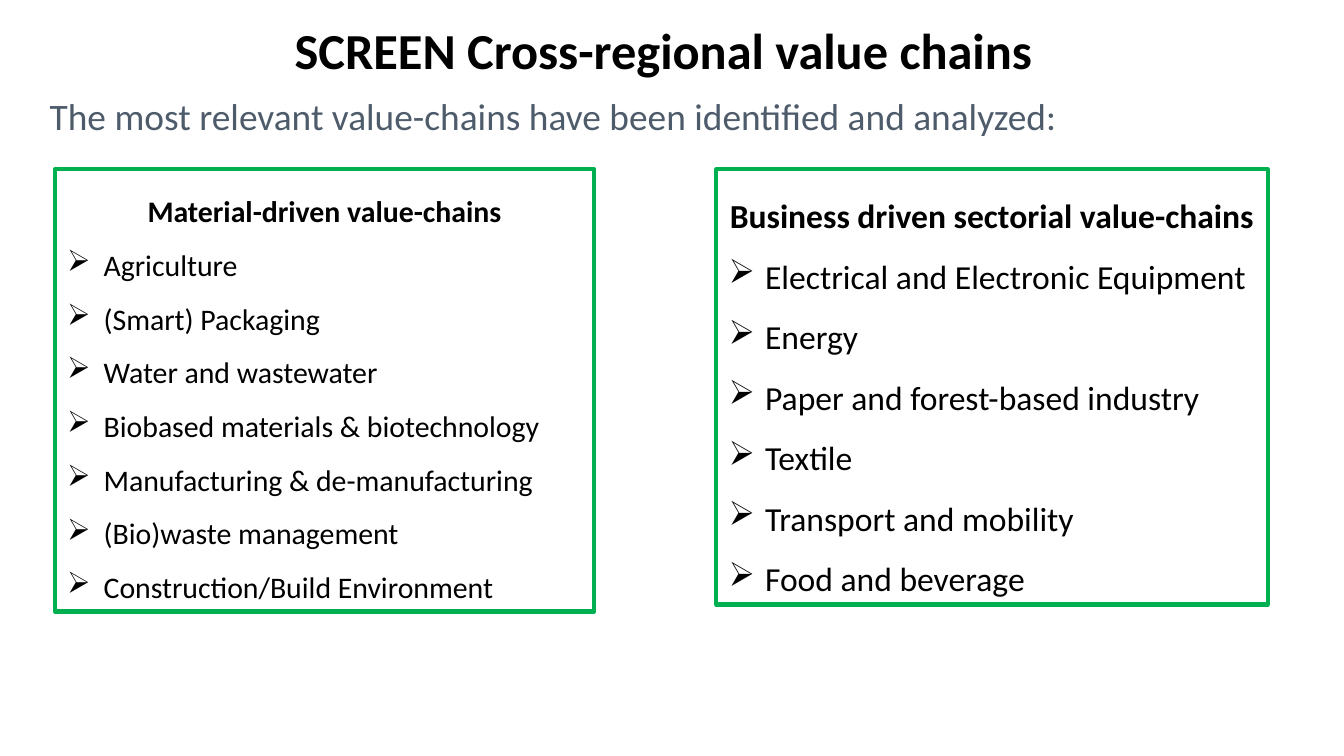
from lxml.etree import SubElement
from pptx import Presentation
from pptx.dml.color import RGBColor as Rgb
from pptx.enum.shapes import MSO_SHAPE as Preset
from pptx.enum.text import MSO_ANCHOR as Anchor, MSO_AUTO_SIZE as AutoSize, PP_ALIGN as Align
from pptx.oxml.ns import qn
from pptx.util import Cm, Pt

COLORS = {"text": "000000", "subtitle": "4D5B6B", "border": "00B050"}
FONT = "Calibri"
INDENT = 0.69

MATERIAL_CHAINS = [
    "Agriculture",
    "(Smart) Packaging",
    "Water and wastewater",
    "Biobased materials & biotechnology",
    "Manufacturing & de-manufacturing",
    "(Bio)waste management",
    "Construction/Build Environment",
]
BUSINESS_CHAINS = [
    "Electrical and Electronic Equipment",
    "Energy",
    "Paper and forest-based industry",
    "Textile",
    "Transport and mobility",
    "Food and beverage",
]


def write(paragraph, text, size, color="text", bold=False, align=Align.LEFT, spacing=1.0, bullet=None):
    paragraph.alignment = align
    paragraph.line_spacing = spacing
    paragraph.space_before = Pt(0)
    if bullet:
        properties = paragraph._p.get_or_add_pPr()
        properties.set("marL", str(Cm(INDENT)))
        properties.set("indent", str(-Cm(INDENT)))
        SubElement(properties, qn("a:buChar")).set("char", bullet)
    run = paragraph.add_run()
    run.text = text
    run.font.name = FONT
    run.font.size = Pt(size)
    run.font.bold = bold
    run.font.color.rgb = Rgb.from_string(COLORS[color])


class SlideBuilder:
    """Hold the slide and its style, and add each kind of element."""

    def __init__(self, presentation):
        self.slide = presentation.slides.add_slide(presentation.slide_layouts[5])

    def prepare(self, shape):
        frame = shape.text_frame
        frame.word_wrap = True
        frame.auto_size = AutoSize.NONE
        frame.vertical_anchor = Anchor.TOP
        frame.margin_left = frame.margin_right = Cm(0.23)
        frame.margin_top = frame.margin_bottom = Cm(0.11)
        return frame

    def title(self, text, left, top, width, height):
        shape = self.slide.shapes.title
        shape.left, shape.top, shape.width, shape.height = map(Cm, (left, top, width, height))
        write(self.prepare(shape).paragraphs[0], text, 27, bold=True, align=Align.CENTER)

    def subtitle(self, text, left, top, width, height):
        shape = self.slide.shapes.add_textbox(*map(Cm, (left, top, width, height)))
        write(self.prepare(shape).paragraphs[0], text, 20, color="subtitle")

    def chain_box(self, heading, items, size, left, top, width, height):
        shape = self.slide.shapes.add_shape(Preset.RECTANGLE, *map(Cm, (left, top, width, height)))
        shape.shadow.inherit = False
        shape.fill.background()
        shape.line.color.rgb = Rgb.from_string(COLORS["border"])
        shape.line.width = Pt(2.25)
        frame = self.prepare(shape)
        write(frame.paragraphs[0], heading, size, bold=True, align=Align.CENTER, spacing=1.5)
        for item in items:
            write(frame.add_paragraph(), item, size, spacing=1.5, bullet="➢")


def main():
    presentation = Presentation()
    presentation.slide_width, presentation.slide_height = Cm(25.4), Cm(14.29)
    builder = SlideBuilder(presentation)
    builder.title("SCREEN Cross-regional value chains", 2.06, 0.25, 20.96, 1.37)
    builder.subtitle(
        "The most relevant value-chains have been identified and analyzed:", 0.71, 1.65, 23.83, 1.07
    )
    builder.chain_box("Business driven sectorial value-chains", BUSINESS_CHAINS, 18, 13.54, 3.2, 10.42, 8.23)
    builder.chain_box("Material-driven value-chains", MATERIAL_CHAINS, 16, 1.04, 3.2, 10.19, 8.36)
    presentation.save("out.pptx")


if __name__ == "__main__":
    main()
